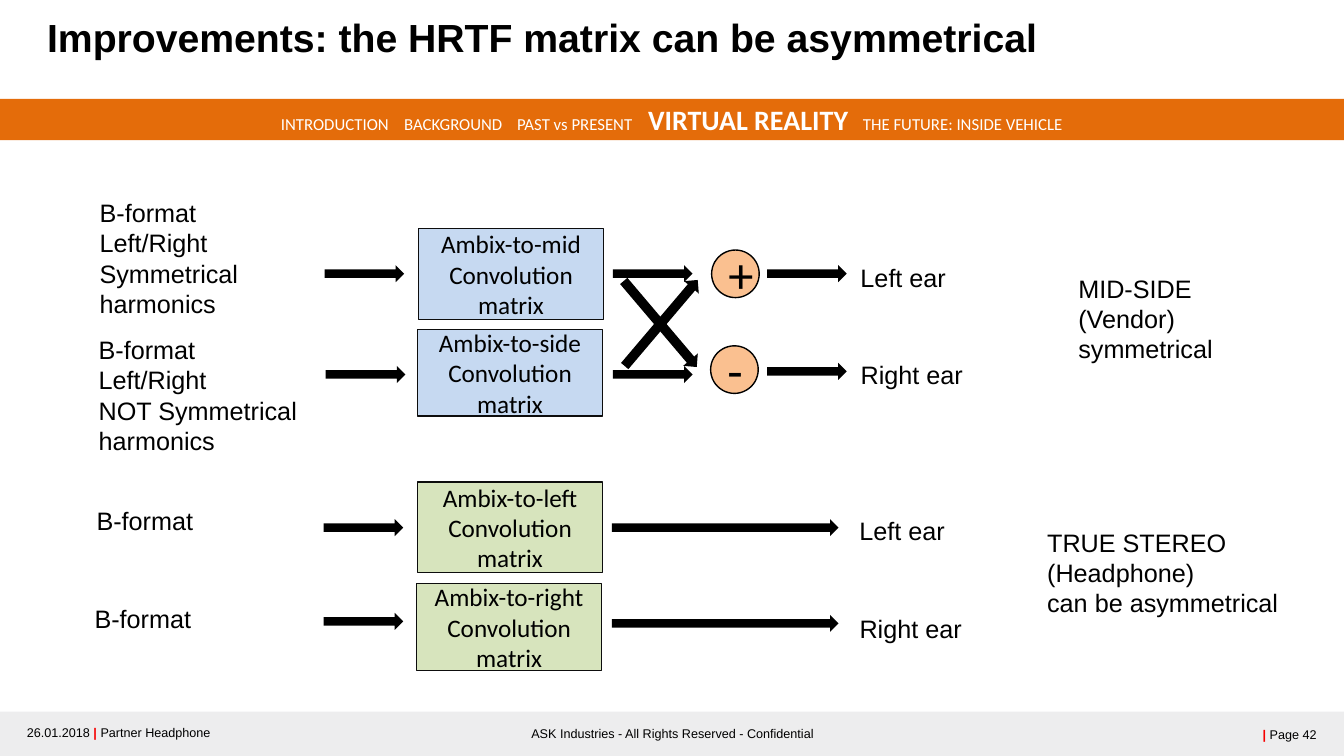
from lxml import etree
from pptx import Presentation
from pptx.dml.color import RGBColor
from pptx.enum.shapes import MSO_SHAPE
from pptx.enum.text import MSO_ANCHOR, PP_ALIGN
from pptx.oxml.ns import qn
from pptx.util import Pt

RECT, OVAL, ARROW = MSO_SHAPE.RECTANGLE, MSO_SHAPE.OVAL, MSO_SHAPE.RIGHT_ARROW
TOP, MID = MSO_ANCHOR.TOP, MSO_ANCHOR.MIDDLE
LEFT, CENTER, RIGHT = PP_ALIGN.LEFT, PP_ALIGN.CENTER, PP_ALIGN.RIGHT
BLACK = RGBColor(0x00, 0x00, 0x00)
WHITE = RGBColor(0xFF, 0xFF, 0xFF)
EDGE = RGBColor(0x0D, 0x0D, 0x0D)
GRAY = RGBColor(0xED, 0xED, 0xEE)
RED = RGBColor(0xF6, 0x00, 0x00)
ORANGE = RGBColor(0xE4, 0x6C, 0x0A)
PEACH = RGBColor(0xFA, 0xC0, 0x90)
BLUE = RGBColor(0xC6, 0xD9, 0xF1)
GREEN = RGBColor(0xD7, 0xE4, 0xBD)

WIDE, HIGH = 960, 540
TITLE = "Improvements: the HRTF matrix can be asymmetrical"
BAR = ("|", {"bold": True, "color": RED})
FOOTER = [
    ((12.2, 514.1, 237.6, 18), LEFT, ["26.01.2018 ", BAR, " Partner Headphone"]),
    ((340.6, 514.8, 279.4, 18), CENTER, ["ASK Industries - All Rights Reserved - Confidential"]),
    ((849.6, 515.5, 97.9, 18), RIGHT, [BAR, " Page 42"]),
]
NAV = [
    "INTRODUCTION\tBACKGROUND\tPAST vs PRESENT\t",
    ("VIRTUAL REALITY", {"size": 20, "bold": True}),
    "\tTHE FUTURE: INSIDE VEHICLE",
]
NAV_LEFT, NAV_TABS = 200.7, [88, 168.6, 262.2, 415.7]

BOX_WIDE, THIN, SHORT, LONG = 132.5, 12.2, 56.9, 162
BOXES = [
    ("mid", 298.8, 163.4, 64.8, BLUE),
    ("side", 298.1, 235.4, 61.9, BLUE),
    ("left", 298.1, 344.2, 64.8, GREEN),
    ("right", 297.4, 416.9, 61.9, GREEN),
]
ARROWS = [
    (231.8, 189.4, SHORT), (232.6, 261.4, SHORT),
    (231.1, 370.8, SHORT), (231.1, 437.8, SHORT),
    (437.8, 189.4, SHORT), (437.8, 261.4, SHORT),
    (547.9, 189.4, SHORT), (547.9, 259.2, SHORT),
    (437, 370.8, LONG), (437, 439.2, LONG),
]
CROSS = [(432, 223.9, 310.3), (431.3, 224.6, 49.7)]
NODES = [("+", 508.3, 178.6), ("-", 507.6, 247)]
LABELS = [
    ((64.1, 137.5, 187.2, 94.3), ["B-format", "Left/Right", "Symmetrical harmonics"]),
    ((63.4, 235.4, 165.6, 94.3), ["B-format", "Left/Right", "NOT Symmetrical harmonics"]),
    ((61.9, 357.1, 146.2, 28.8), ["B-format"]),
    ((60.5, 427.7, 146.2, 28.8), ["B-format"]),
    ((763.2, 191.5, 158.4, 72.7), ["MID-SIDE (Vendor)", "symmetrical"]),
    ((740.9, 373, 181.4, 72.7), ["TRUE STEREO (Headphone)", "can be asymmetrical"]),
]
EARS = [
    ("Left ear", 607, 172.8, 76.3), ("Right ear", 607, 242.6, 88.6),
    ("Left ear", 606.2, 353.5, 76.3), ("Right ear", 606.2, 424.1, 88.6),
]

deck = Presentation()
deck.slide_width, deck.slide_height = Pt(WIDE), Pt(HIGH)
slide = deck.slides.add_slide(deck.slide_layouts[6])


def write(text, at=None, item=None, size=18, font="Arial", color=BLACK, bold=False,
          align=LEFT, anchor=TOP, wrap=True, space=None, tabs=()):
    if item is None:
        item = slide.shapes.add_textbox(*map(Pt, at))
    frame = item.text_frame
    frame.word_wrap, frame.vertical_anchor = wrap, anchor
    for num, line in enumerate(text):
        para = frame.add_paragraph() if num else frame.paragraphs[0]
        para.alignment = align
        if space:
            para.line_spacing = space
        if tabs:
            stops = etree.SubElement(para._p.get_or_add_pPr(), qn("a:tabLst"))
            for pos in tabs:
                etree.SubElement(stops, qn("a:tab"), pos=str(Pt(pos)), algn="l")
        for part in [line] if isinstance(line, str) else line:
            words, own = (part, {}) if isinstance(part, str) else part
            run = para.add_run()
            run.text = words
            run.font.name = font
            run.font.size = Pt(own.get("size", size))
            run.font.bold = own.get("bold", bold)
            run.font.color.rgb = own.get("color", color)
    return item


def draw(kind, at, fill, edge=None, turn=0):
    item = slide.shapes.add_shape(kind, *map(Pt, at))
    item.shadow.inherit = False
    item.fill.solid()
    item.fill.fore_color.rgb = fill
    item.rotation = turn
    if edge is None:
        item.line.fill.background()
    else:
        item.line.color.rgb = edge
        item.line.width = Pt(1)
    return item


draw(RECT, (0, 508.3, WIDE, 31.7), GRAY)
for at, align, parts in FOOTER:
    write([parts], at, size=9, align=align, anchor=MID)

band = draw(RECT, (0, 70.6, WIDE, 29.5), ORANGE)
band.text_frame.margin_left = Pt(NAV_LEFT)
write([NAV], item=band, size=12, font="Calibri", color=WHITE, anchor=MID, tabs=NAV_TABS)

for name, x, y, tall, fill in BOXES:
    write([f"Ambix-to-{name}", "Convolution matrix"],
          item=draw(RECT, (x, y, BOX_WIDE, tall), fill, EDGE),
          font="Calibri", align=CENTER, anchor=MID)
for x, y, long in ARROWS:
    draw(ARROW, (x, y, long, THIN), BLACK)
for x, y, turn in CROSS:
    draw(ARROW, (x, y, 80.6, 13.7), BLACK, turn=turn)
for sign, x, y in NODES:
    write([sign], item=draw(OVAL, (x, y, 34, 34), PEACH, BLACK),
          size=36, font="Calibri", align=CENTER, anchor=MID)
for at, lines in LABELS:
    write(lines, at)
for ear, x, y, wide in EARS:
    write([ear], (x, y, wide, 36), align=CENTER, wrap=False, space=1.5)
write([TITLE], (26.6, 9.4, 753.8, 68.4), size=28, bold=True, space=0.9)

deck.save("out.pptx")
